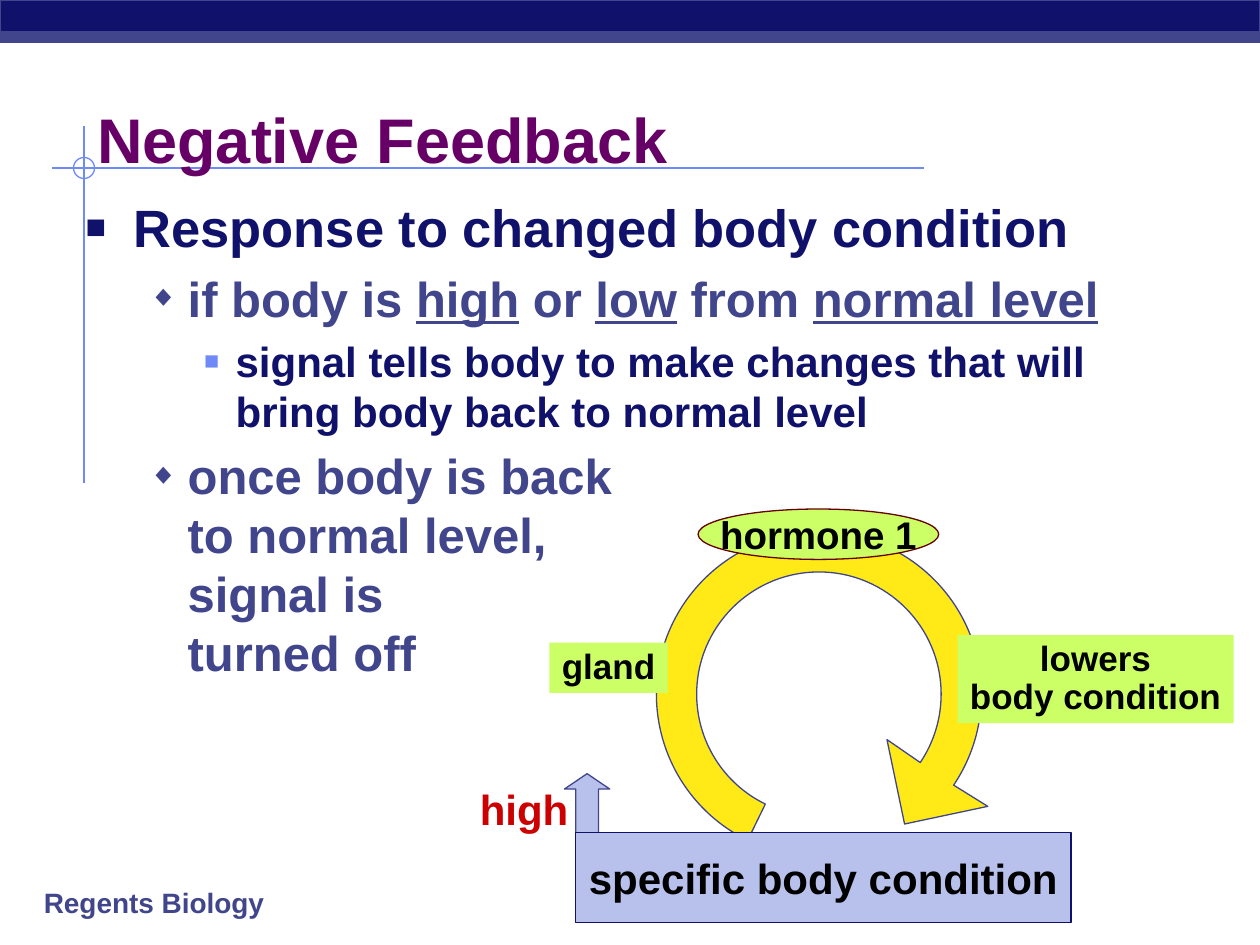
from dataclasses import dataclass
from math import cos, radians, sin, tan

from lxml.etree import SubElement as Sub
from pptx import Presentation
from pptx.dml.color import RGBColor
from pptx.enum.shapes import MSO_CONNECTOR as Link, MSO_SHAPE as Kind
from pptx.enum.text import MSO_ANCHOR as Anchor, MSO_AUTO_SIZE as Fit, PP_ALIGN as Align
from pptx.oxml.ns import qn
from pptx.util import Inches, Pt


@dataclass(frozen=True)
class Theme:
    face: str = "Arial"
    navy: str = "0F116A"
    slate: str = "40458C"
    sky: str = "6F89F7"
    plum: str = "660066"
    maroon: str = "660000"
    red: str = "CC0000"
    lime: str = "CCFF66"
    gold: str = "FFEA18"
    pale: str = "B7C1EB"
    black: str = "000000"
    ink: str = "010101"
    title: int = 36
    levels: tuple = (30, 28, 24)
    label: int = 24
    oval: int = 22
    tag: int = 20
    foot: int = 16


T = Theme()

# Bullet levels: mark, mark colour, mark size %, text colour, margin, hang
LEVELS = (
    ("■", T.navy, 65, T.navy, 0.38, 0.38),
    ("◆", T.slate, 60, T.slate, 0.81, 0.31),
    ("■", T.sky, 60, T.navy, 1.19, 0.25),
)

# Level and pieces of text; every second piece is underlined
POINTS = (
    (0, ["Response to changed body condition"]),
    (1, ["if body is ", "high", " or ", "low", " from ", "normal level", " "]),
    (2, ["signal tells body to make changes that will bring body back to normal level"]),
    (1, ["once body is back \nto normal level, \nsignal is \nturned off"]),
)


def rgb(code):
    return RGBColor.from_string(code)


def place(shape, box):
    shape.left, shape.top, shape.width, shape.height = map(Inches, box)


def style(par, size, color, align=Align.LEFT):
    par.alignment = align
    font = par.font
    font.name, font.size, font.bold = T.face, Pt(size), True
    font.color.rgb = rgb(color)


def paint(shape, fill=None, line=None):
    shape.shadow.inherit = False
    if fill:
        shape.fill.solid()
        shape.fill.fore_color.rgb = rgb(fill)
    else:
        shape.fill.background()
    if line:
        shape.line.color.rgb = rgb(line)
        shape.line.width = Pt(0.75)
    else:
        shape.line.fill.background()


def draw(slide, kind, box, fill=None, line=None):
    shape = slide.shapes.add_shape(kind, *map(Inches, box))
    paint(shape, fill, line)
    return shape


def write(shape, text, size, color, align=Align.CENTER, space=None):
    frame = shape.text_frame
    frame.word_wrap = False
    frame.vertical_anchor = Anchor.MIDDLE
    par = frame.paragraphs[0]
    par.text = text
    par.line_spacing = space
    style(par, size, color, align)


def rule(slide, start, end):
    line = slide.shapes.add_connector(Link.STRAIGHT, *map(Inches, start + end))
    line.line.color.rgb = rgb(T.sky)
    line.line.width = Pt(1)
    Sub(line._element.spPr, qn("a:effectLst"))


def decor(slide, box):
    """Top bands, crosshair and footer, on a grid of 1/12 inch."""
    left, top, width, height = box
    unit = 1 / 12
    draw(slide, Kind.RECTANGLE, (left, top, width, 4 * unit), T.navy, T.slate)
    draw(slide, Kind.RECTANGLE, (left, top + 3 * unit, width, unit), T.slate, T.slate)
    x, y = left + 8 * unit, top + 16 * unit
    rule(slide, (x - 3 * unit, y), (x + 80 * unit, y))
    rule(slide, (x, y - 4 * unit), (x, y + 30 * unit))
    draw(slide, Kind.OVAL, (x - unit, y - unit, 2 * unit, 2 * unit), line=T.sky)
    foot = slide.shapes.add_textbox(*map(Inches, (left + 0.25, top + height - 0.52, 2.33, 0.37)))
    write(foot, "Regents Biology", T.foot, T.slate, Align.LEFT)


def head(slide, box):
    """Title, raised above the crosshair."""
    title = slide.shapes.title
    place(title, box)
    slide.shapes._spTree.append(title._element)
    title.text_frame.auto_size = Fit.NONE
    title.text_frame.vertical_anchor = Anchor.TOP
    par = title.text_frame.paragraphs[0]
    par.text = "Negative Feedback"
    style(par, T.title, T.plum)


def mark(par, level):
    """Bullet and indent of a list level."""
    char, tint, scale, _, margin, hang = LEVELS[level]
    props = par._p.get_or_add_pPr()
    props.set("marL", str(Inches(margin)))
    props.set("indent", str(-Inches(hang)))
    Sub(Sub(props, qn("a:buClr")), qn("a:srgbClr"), val=tint)
    Sub(props, qn("a:buSzPct"), val=str(scale * 1000))
    Sub(props, qn("a:buFont"), typeface=T.face)
    Sub(props, qn("a:buChar"), char=char)


def points(slide, box):
    """Bulleted list."""
    body = slide.placeholders[1]
    place(body, box)
    slide.shapes._spTree.append(body._element)
    frame = body.text_frame
    frame.auto_size = Fit.NONE
    for i, (level, parts) in enumerate(POINTS):
        par = frame.add_paragraph() if i else frame.paragraphs[0]
        par.text = parts[0]
        for j, part in enumerate(parts[1:], 1):
            run = par.add_run()
            run.text = part
            run.font.underline = j % 2 == 1
        par.level = level
        mark(par, level)
        size = T.levels[level]
        par.space_before = Pt(size * 0.2)
        style(par, size, LEVELS[level][3])


def loop(slide, x, y):
    """Ring arrow around the centre x, y: two arcs of curves and a head."""
    outer, inner = 1.29, 0.97
    turns = (116, 180, 270, 360, 394)

    def spot(radius, angle):
        return radius * cos(radians(angle)), radius * sin(radians(angle))

    rim = [spot(outer, a) for a in turns]
    hole = [spot(inner, a) for a in reversed(turns)]
    dots = rim + [(1.34, 0.89), (0.68, 1.03), (0.54, 0.36)] + hole
    dots = [(Inches(x + a), Inches(y + b)) for a, b in dots]
    build = slide.shapes.build_freeform(*dots[0])
    build.add_line_segments(dots[1:], close=True)
    ring = build.convert_to_shape()
    paint(ring, T.gold, T.slate)

    # Bend the straight sides of both arcs
    sides = list(ring._element.iter(qn("a:lnTo")))
    bends = [(outer, a, b) for a, b in zip(turns, turns[1:])]
    bends += [(inner, b, a) for a, b in reversed(list(zip(turns, turns[1:])))]
    for side, (radius, a, b) in zip(sides[:4] + sides[8:12], bends):
        pull = 4 / 3 * tan(radians(b - a) / 4)
        (ax, ay), (bx, by) = spot(radius, a), spot(radius, b)
        grips = (ax - pull * ay, ay + pull * ax), (bx + pull * by, by - pull * bx)
        side.tag = qn("a:cubicBezTo")
        for i, (gx, gy) in enumerate(grips):
            grip = Sub(side, qn("a:pt"), x=str(Inches(gx + outer)), y=str(Inches(gy + outer)))
            side.insert(i, grip)


def cycle(slide, box):
    """Feedback loop with its labels."""
    left, top, width, height = box

    def at(x, y, w, h):
        return left + x, top + y, w, h

    loop(slide, left + 2.79, top + 1.47)
    arrow = draw(slide, Kind.UP_ARROW, at(0.77, 2.1, 0.36, 0.49), T.pale, T.slate)
    arrow.adjustments[1] = 0.34
    high = slide.shapes.add_textbox(*map(Inches, at(0, 2.13, 0.9, 0.5)))
    write(high, "high", T.label, T.red)
    oval = draw(slide, Kind.OVAL, at(1.83, 0, 1.91, 0.4), T.lime, T.maroon)
    write(oval, "hormone 1", T.oval, T.black)
    tags = (("lowers\nbody condition", (3.89, 1, 2.19, 0.7)), ("gland", (0.65, 1.06, 0.94, 0.4)))
    for text, spot in tags:
        tag = draw(slide, Kind.RECTANGLE, at(*spot), T.lime)
        write(tag, text, T.tag, T.ink, space=0.9)
    base = draw(slide, Kind.RECTANGLE, at(0.86, height - 0.71, 3.93, 0.71), T.pale, T.navy)
    write(base, "specific body condition", T.label, T.ink)


def main():
    deck = Presentation()
    deck.slide_width, deck.slide_height = Inches(10), Inches(7.5)
    slide = deck.slides.add_slide(deck.slide_layouts[1])
    decor(slide, (0, 0, 10, 7.5))
    head(slide, (0.67, 0.75, 8.5, 0.83))
    points(slide, (0.58, 1.5, 8.85, 5.63))
    cycle(slide, (3.71, 4.04, 6.08, 3.28))
    deck.save("out.pptx")


if __name__ == "__main__":
    main()
